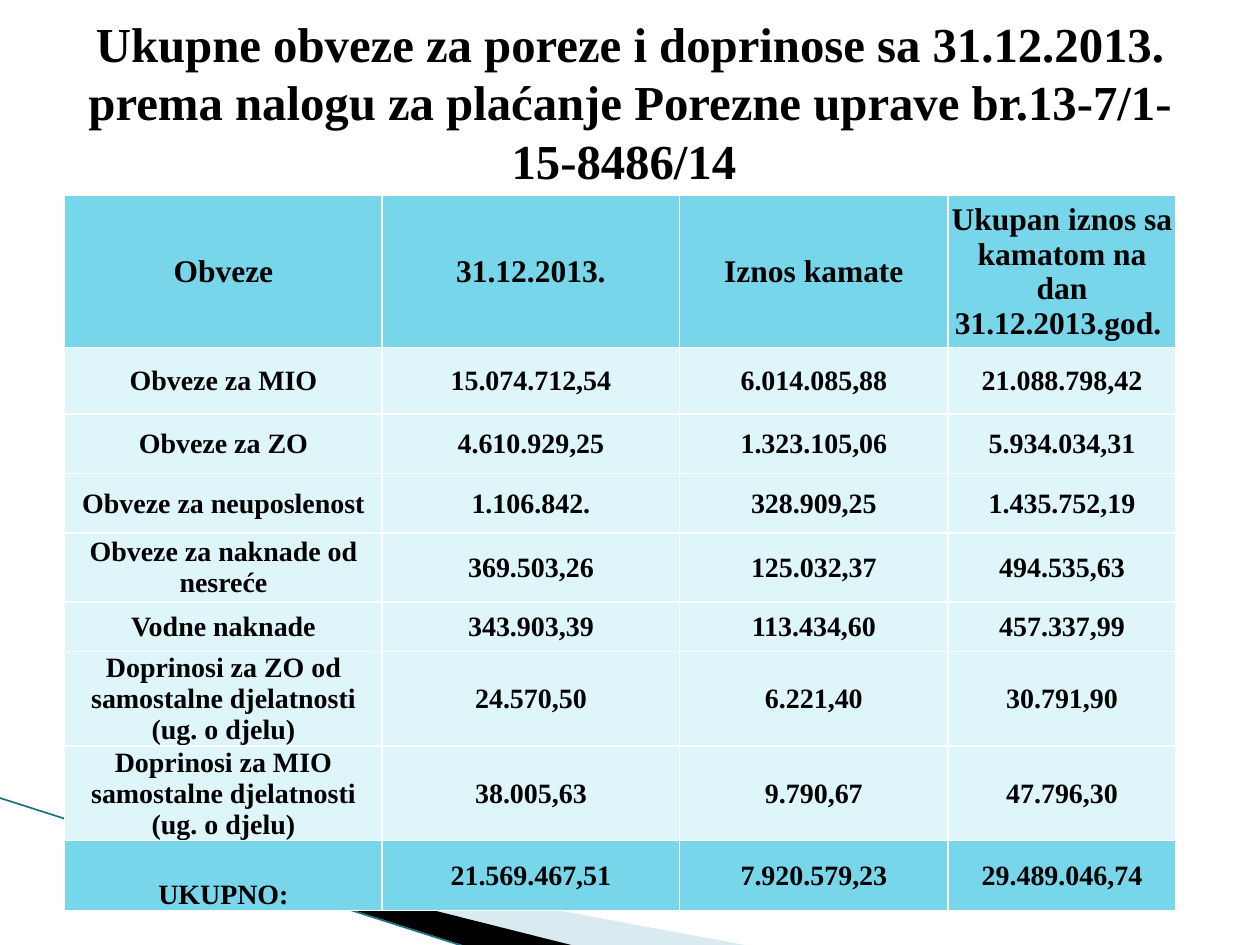
from dataclasses import dataclass

from lxml.etree import SubElement
from pptx import Presentation
from pptx.dml.color import RGBColor as Color
from pptx.enum.shapes import MSO_CONNECTOR as Connector
from pptx.enum.text import MSO_ANCHOR as Anchor, MSO_AUTO_SIZE as AutoSize, PP_ALIGN as Align
from pptx.oxml import parse_xml
from pptx.oxml.ns import nsdecls, qn
from pptx.util import Pt


@dataclass(frozen=True)
class Theme:
    font: str = "Times New Roman"
    ink: str = "000000"
    band: str = "78D6EA"
    row: str = "DEF5FA"
    border: str = "FFFFFF"
    swoosh: str = "A0CBDC"
    edge: str = "1B7083"
    title_size: float = 27.9
    header_size: float = 18
    body_size: float = 16


@dataclass(frozen=True)
class Wedge:
    points: tuple[tuple[float, float], ...]
    color: str
    opacity: int = 100


@dataclass(frozen=True)
class Row:
    height: float
    cells: tuple[str, ...]
    label_anchor: Anchor = Anchor.MIDDLE
    total: bool = False


THEME = Theme()
COLUMN_WIDTHS = (181.4, 170, 153.4, 130.2)
TABLE_LEFT, TABLE_TOP = 37, 111.5

WEDGES = (
    Wedge(((39.6, 468.5), (428.4, 540.5), (328.3, 540.5), (39.6, 468)), THEME.swoosh, 40),
    Wedge(((38.2, 467.5), (329, 540.7), (267.8, 541.2), (38.9, 468)), THEME.ink),
)

ROWS = (
    Row(87, ("Obveze", "31.12.2013.", "Iznos kamate",
             "Ukupan iznos sa kamatom na dan 31.12.2013.god. "), total=True),
    Row(38, ("Obveze za MIO", "15.074.712,54", "6.014.085,88", "21.088.798,42")),
    Row(34, ("Obveze za ZO", "4.610.929,25", "1.323.105,06", "5.934.034,31")),
    Row(34, ("Obveze za neuposlenost", "1.106.842.", "328.909,25", "1.435.752,19")),
    Row(39.5, ("Obveze za naknade od nesreće", "369.503,26", "125.032,37", "494.535,63")),
    Row(28.4, ("Vodne naknade", "343.903,39", "113.434,60", "457.337,99")),
    Row(54, ("Doprinosi za ZO od samostalne djelatnosti\n(ug. o djelu)",
             "24.570,50", "6.221,40", "30.791,90"), Anchor.BOTTOM),
    Row(54, ("Doprinosi za MIO samostalne djelatnosti (ug. o djelu)",
             "38.005,63", "9.790,67", "47.796,30"), Anchor.BOTTOM),
    Row(40, ("UKUPNO:", "21.569.467,51", "7.920.579,23", "29.489.046,74"),
        Anchor.BOTTOM, total=True),
)


def write_text(frame, text: str, *, size: float, bold: bool = True,
               color: str = THEME.ink, align: Align = Align.CENTER) -> None:
    """Fill a text frame, one paragraph per line of text."""
    frame.word_wrap = True
    for index, line in enumerate(text.split("\n")):
        para = frame.add_paragraph() if index else frame.paragraphs[0]
        para.alignment = align
        span = para.add_run()
        span.text = line
        span.font.name = THEME.font
        span.font.size = Pt(size)
        span.font.bold = bold
        span.font.color.rgb = Color.from_string(color)


def add_wedge(slide, wedge: Wedge) -> None:
    start, *rest = [(Pt(x), Pt(y)) for x, y in wedge.points]
    builder = slide.shapes.build_freeform(*start, scale=1.0)
    builder.add_line_segments(rest, close=True)
    shape = builder.convert_to_shape()
    shape.shadow.inherit = False
    shape.line.fill.background()
    shape.fill.solid()
    shape.fill.fore_color.rgb = Color.from_string(wedge.color)
    if wedge.opacity < 100:
        tint = shape._element.spPr.find(f"{qn('a:solidFill')}/{qn('a:srgbClr')}")
        SubElement(tint, qn("a:alpha")).set("val", str(wedge.opacity * 1000))


def add_edge(slide) -> None:
    line = slide.shapes.add_connector(
        Connector.STRAIGHT, Pt(-0.7), Pt(455.8), Pt(267.1), Pt(541.4))
    line.line.color.rgb = Color.from_string(THEME.edge)
    line.line.width = Pt(0.95)
    SubElement(line._element.spPr, qn("a:effectLst"))


def set_borders(cell, color: str, width: float) -> None:
    properties = cell._tc.get_or_add_tcPr()
    for index, side in enumerate(("lnL", "lnR", "lnT", "lnB")):
        properties.insert(index, parse_xml(
            f'<a:{side} {nsdecls("a")} w="{Pt(width)}"><a:solidFill>'
            f'<a:srgbClr val="{color}"/></a:solidFill></a:{side}>'))


def add_obligations_table(slide) -> None:
    table = slide.shapes.add_table(
        len(ROWS), len(COLUMN_WIDTHS), Pt(TABLE_LEFT), Pt(TABLE_TOP),
        Pt(sum(COLUMN_WIDTHS)), Pt(sum(row.height for row in ROWS))).table
    for column, width in zip(table.columns, COLUMN_WIDTHS):
        column.width = Pt(width)
    for row_index, row in enumerate(ROWS):
        table.rows[row_index].height = Pt(row.height)
        size = THEME.body_size if row_index else THEME.header_size
        for column_index, text in enumerate(row.cells):
            cell = table.cell(row_index, column_index)
            cell.margin_left = cell.margin_right = cell.margin_top = Pt(0.7)
            cell.margin_bottom = Pt(0)
            cell.vertical_anchor = Anchor.MIDDLE if column_index else row.label_anchor
            cell.fill.solid()
            cell.fill.fore_color.rgb = Color.from_string(THEME.band if row.total else THEME.row)
            set_borders(cell, THEME.border, 1)
            write_text(cell.text_frame, text, size=size)


def add_title(slide, text: str) -> None:
    title = slide.shapes.title
    title.left, title.top, title.width, title.height = Pt(36), Pt(21.6), Pt(648), Pt(72.7)
    frame = title.text_frame
    frame.auto_size = AutoSize.NONE
    frame.vertical_anchor = Anchor.MIDDLE
    write_text(frame, text, size=THEME.title_size)


def main() -> None:
    deck = Presentation()
    deck.slide_width, deck.slide_height = Pt(720), Pt(540)
    page = deck.slides.add_slide(deck.slide_layouts[5])
    # Corner decoration
    for wedge in WEDGES:
        add_wedge(page, wedge)
    add_edge(page)
    # Content
    add_obligations_table(page)
    add_title(page, "Ukupne obveze za poreze i doprinose sa 31.12.2013. prema nalogu "
                    "za plaćanje Porezne uprave br.13-7/1-15-8486/14 ")
    deck.save("out.pptx")


if __name__ == "__main__":
    main()
